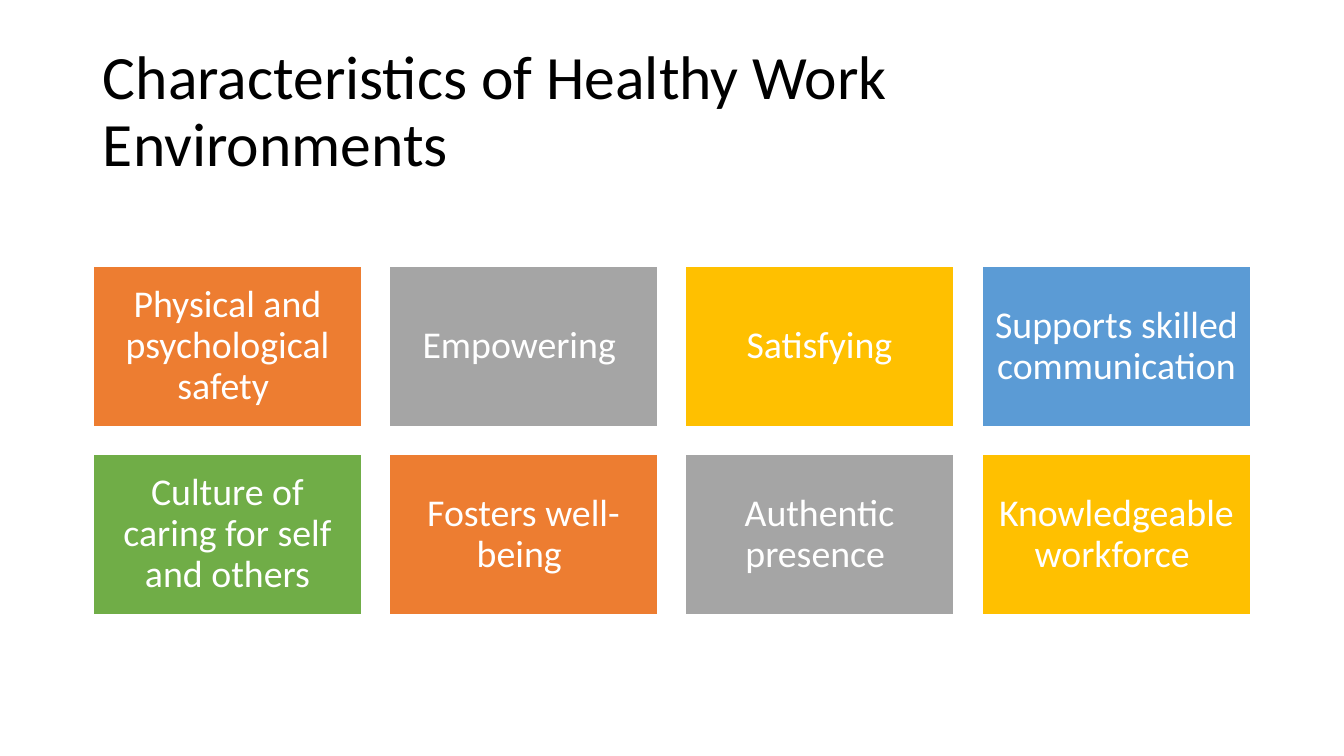
from pptx import Presentation
from pptx.dml.color import RGBColor
from pptx.enum.shapes import MSO_SHAPE
from pptx.enum.text import MSO_ANCHOR, PP_ALIGN
from pptx.util import Pt

EMU_PER_PX = 914400 / 100.8
RECTANGLE = MSO_SHAPE.RECTANGLE
MIDDLE = MSO_ANCHOR.MIDDLE
LEFT, CENTER = PP_ALIGN.LEFT, PP_ALIGN.CENTER

WHITE, BLACK = "FFFFFF", "000000"
ORANGE, GRAY, GOLD, BLUE, GREEN = "ED7D31", "A5A5A5", "FFC000", "5B9BD5", "70AD47"

COLUMNS = 4
GRID_LEFT, GRID_TOP = 93, 266
COLUMN_SPAN, ROW_PITCH = 889, 188
TILE_WIDTH, TILE_HEIGHT = 269, 161

CHARACTERISTICS = [
    ("Physical and psychological safety ", ORANGE),
    ("Empowering ", GRAY),
    ("Satisfying", GOLD),
    ("Supports skilled communication", BLUE),
    ("Culture of caring for self and others", GREEN),
    ("Fosters well-being ", ORANGE),
    ("Authentic presence ", GRAY),
    ("Knowledgeable workforce ", GOLD),
]


def px(length):
    return round(length * EMU_PER_PX)


def color(value):
    return RGBColor.from_string(value)


def set_values(target, values):
    for name, value in values.items():
        setattr(target, name, value)


class SlideBuilder:
    font_name = "Calibri"
    line_spacing = 0.9

    def __init__(self, deck):
        self.slide = deck.slides.add_slide(deck.slide_layouts[6])

    def add_text(self, box, text, size, ink, alignment, insets):
        frame = box.text_frame
        margins = ("margin_left", "margin_top", "margin_right", "margin_bottom")
        set_values(frame, {"word_wrap": True, "vertical_anchor": MIDDLE})
        set_values(frame, {name: px(inset) for name, inset in zip(margins, insets)})
        para = frame.paragraphs[0]
        set_values(para, {"alignment": alignment, "line_spacing": self.line_spacing})
        span = para.add_run()
        span.text = text
        set_values(span.font, {"name": self.font_name, "size": Pt(size)})
        span.font.color.rgb = color(ink)

    def title(self, text, left, top, width, height):
        box = self.slide.shapes.add_textbox(*map(px, (left, top, width, height)))
        self.add_text(box, text, 44, BLACK, LEFT, (10, 5, 16, 5))

    def tile(self, text, fill, left, top, width, height):
        box = self.slide.shapes.add_shape(RECTANGLE, *map(px, (left, top, width, height)))
        box.shadow.inherit = False
        box.fill.solid()
        box.fill.fore_color.rgb = color(fill)
        box.line.color.rgb = color(WHITE)
        box.line.width = Pt(1)
        self.add_text(box, text, 27, WHITE, CENTER, (11, 11, 11, 11))


def main():
    deck = Presentation()
    set_values(deck, {"slide_width": px(1344), "slide_height": px(756)})
    page = SlideBuilder(deck)
    page.title("Characteristics of Healthy Work Environments", GRID_LEFT, 40, 1159, 146)
    for index, (text, fill) in enumerate(CHARACTERISTICS):
        row, column = divmod(index, COLUMNS)
        left = GRID_LEFT + column * COLUMN_SPAN // (COLUMNS - 1)
        page.tile(text, fill, left, GRID_TOP + row * ROW_PITCH, TILE_WIDTH, TILE_HEIGHT)
    deck.save("out.pptx")


if __name__ == "__main__":
    main()
